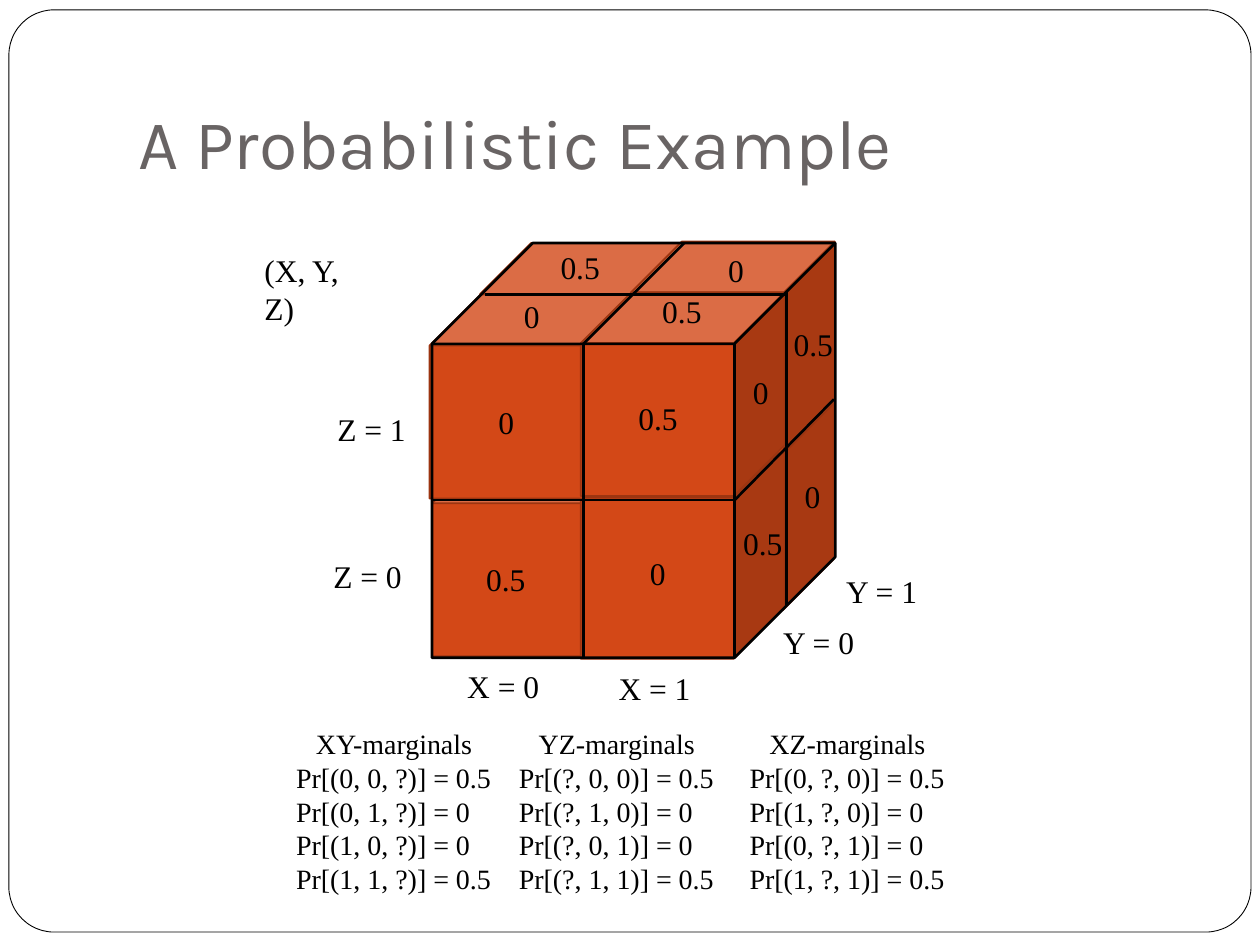
from lxml import etree
from pptx import Presentation
from pptx.dml.color import RGBColor
from pptx.enum.shapes import MSO_CONNECTOR, MSO_SHAPE
from pptx.enum.text import MSO_ANCHOR, PP_ALIGN
from pptx.oxml.ns import qn
from pptx.util import Cm, Pt

LINE = MSO_CONNECTOR.STRAIGHT
CUBE = MSO_SHAPE.CUBE
ROUND = MSO_SHAPE.ROUNDED_RECTANGLE
LOW = MSO_ANCHOR.BOTTOM
TOP = MSO_ANCHOR.TOP
MID = PP_ALIGN.CENTER
LEFT = PP_ALIGN.LEFT
SERIF = "Times New Roman"
BLACK = "000000"

CELLS = [
    (0, 4.22, 4.11), (3, 4.11, 4.27), (0.97, 0, 4.11),
    (4.01, -0.03, 4.27), (-0.05, 1.04, 4.11), (3, 0.99, 4.11),
]
EDGES = [
    (1.07, 1.04, 7.16, 1.04), (3.05, 2.03, 5.08, 0),
    (0, 5.18, 6.1, 5.18), (6.1, 5.18, 8.1, 3.15),
    (3.05, 2.03, 3.05, 8.36), (7.14, 0.99, 7.14, 7.32),
]
ODDS = {
    "0.5": [(3.91, 3.02), (0.84, 6.27), (2.34, -0.03),
            (4.39, 0.86), (6.02, 5.54), (7.04, 1.52)],
    "0": [(1.09, 3.1), (4.14, 6.15), (1.6, 0.97),
          (5.72, 0.03), (6.22, 2.49), (7.26, 4.6)],
}
NAMES = [
    ("(X, Y, Z)", -3.63, 0.03, 2.49), ("X = 1", 3.51, 8.46, 2.49),
    ("X = 0", 0.46, 8.43, 2.49), ("Y = 0", 6.83, 7.54, 2.49),
    ("Z = 1", -2.16, 3.25, 1.98), ("Z = 0", -2.24, 6.2, 1.98),
    ("Y = 1", 8.1, 6.5, 2.49),
]
SUMS = [
    ("XY", 5.72, ["0, 0, ?", "0, 1, ?", "1, 0, ?", "1, 1, ?"]),
    ("YZ", 10.21, ["?, 0, 0", "?, 1, 0", "?, 0, 1", "?, 1, 1"]),
    ("XZ", 14.86, ["0, ?, 0", "1, ?, 0", "0, ?, 1", "1, ?, 1"]),
]


def paint(part, color):
    """Set a fill, line or font colour from a hex string."""
    part.rgb = RGBColor.from_string(color)


def form(slide, kind, box, fill, color, width):
    """Add a preset shape; a fill of None leaves it hollow."""
    shape = slide.shapes.add_shape(kind, *map(Cm, box))
    shape.shadow.inherit = False
    if fill:
        shape.fill.solid()
        paint(shape.fill.fore_color, fill)
    else:
        shape.fill.background()
    paint(shape.line.color, color)
    shape.line.width = Pt(width)
    return shape


def edge(slide, ends):
    """Add a straight black line."""
    line = slide.shapes.add_connector(LINE, *map(Cm, ends))
    paint(line.line.color, BLACK)
    line.line.width = Pt(1.5)
    etree.SubElement(line._element.spPr, qn("a:effectLst"))


def write(slide, box, lines, size=18, face=SERIF, color=BLACK, anchor=TOP):
    """Add a text box with one paragraph for each text and alignment."""
    frame = slide.shapes.add_textbox(*map(Cm, box)).text_frame
    frame.word_wrap = True
    frame.vertical_anchor = anchor
    for i, (text, align) in enumerate(lines):
        para = frame.add_paragraph() if i else frame.paragraphs[0]
        para.text = text
        para.alignment = align
        para.font.size = Pt(size)
        para.font.name = face
        paint(para.font.color, color)
    return frame


def title(slide, box):
    """Place the frame of the slide and its title."""
    form(slide, ROUND, (0.18, 0.2, 25.04, 18.59), "FFFFFF", BLACK,
         0.5).adjustments[0] = 0.049
    frame = write(slide, box, [("A Probabilistic Example", LEFT)],
                  40, "Karla", "696464", LOW)
    frame.margin_bottom = Cm(0.25)


def cube(slide, box):
    """Place the cube of eight cells with its odds and axis names."""
    left, top, wide, high = box
    for x, y, tall in [(3.99, 3.13, 4.27)] + CELLS:
        form(slide, CUBE, (left + x, top + y, 4.11, tall),
             "D34817", "9C3511", 1)
    for text, spots in ODDS.items():
        size = 1.37 if text == "0.5" else 0.79
        for x, y in spots:
            write(slide, (left + x, top + y, size, 1.02), [(text, LEFT)])
    for text, x, y, size in NAMES:
        write(slide, (left + x, top + y, size, 1.02), [(text, LEFT)])
    form(slide, CUBE, box, None, BLACK, 1.5)
    for a, b, c, d in EDGES:
        edge(slide, (left + a, top + b, left + c, top + d))


def sums(slide, box, pair, keys):
    """Place one list of marginals under its heading."""
    rows = [(f"Pr[({key})] = {odds}", LEFT)
            for key, odds in zip(keys, ("0.5", "0", "0", "0.5"))]
    write(slide, box, [(f"{pair}-marginals", MID)] + rows, 16)


def main():
    """Build the slide and save it."""
    deck = Presentation()
    deck.slide_width, deck.slide_height = Cm(25.4), Cm(19.05)
    slide = deck.slides.add_slide(deck.slide_layouts[6])
    title(slide, (2.54, 0.76, 21.59, 3.18))
    cube(slide, (8.71, 4.9, 8.13, 8.36))
    for pair, left, keys in SUMS:
        sums(slide, (left, 14.53, 4.45, 3.68), pair, keys)
    deck.save("out.pptx")


if __name__ == "__main__":
    main()
